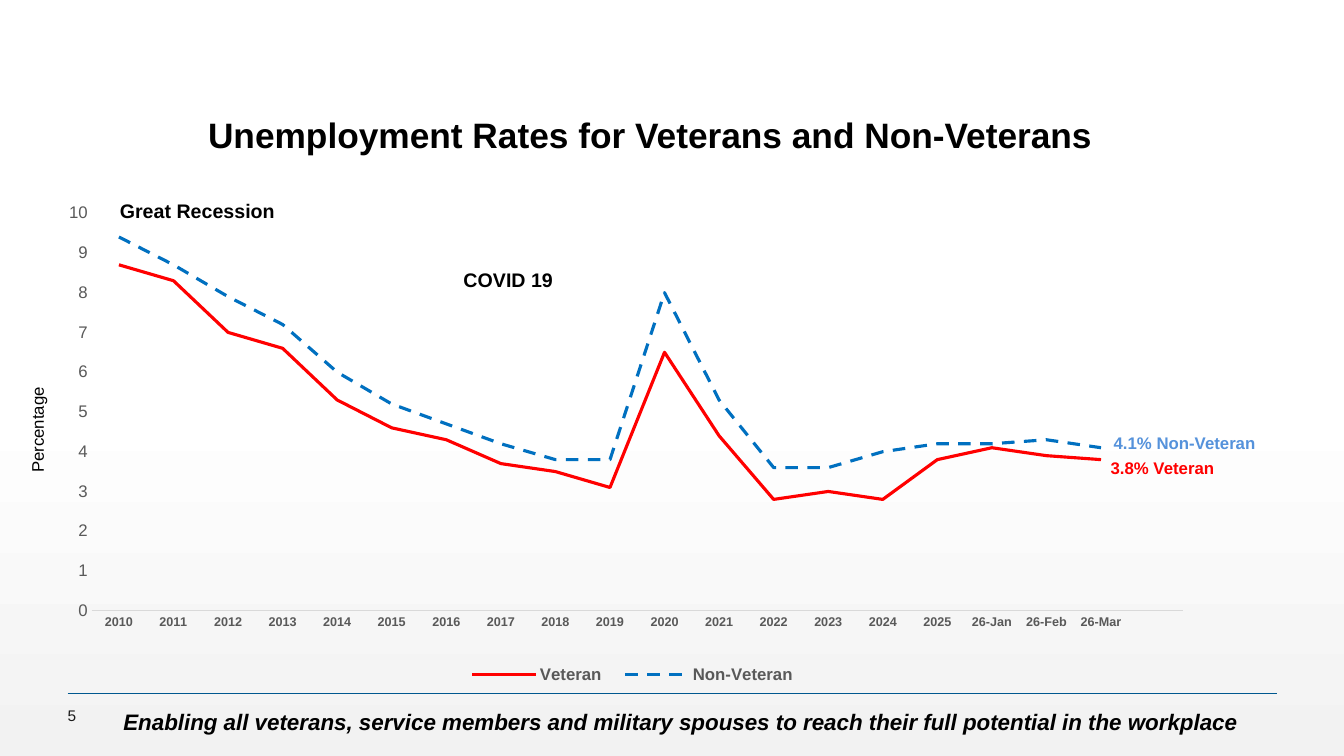
from lxml.etree import SubElement
from pptx import Presentation
from pptx.chart.data import CategoryChartData
from pptx.dml.color import RGBColor
from pptx.enum.chart import XL_CHART_TYPE as ChartType, XL_LEGEND_POSITION as LegendPosition
from pptx.enum.chart import XL_TICK_MARK as TickMark
from pptx.enum.dml import MSO_LINE as Dash
from pptx.enum.shapes import MSO_CONNECTOR as Connector
from pptx.enum.text import MSO_ANCHOR as Anchor, PP_ALIGN as Align
from pptx.oxml.ns import qn
from pptx.util import Inches, Pt

COLUMNS, ROWS = 160, 90
UNIT = Inches(1) / 12
FONT = "Arial"
BLACK, GREY, RED, BLUE = "000000", "595959", "FF0000", "0070C0"
YEARS = [str(year) for year in range(2010, 2026)] + ["26-Jan", "26-Feb", "26-Mar", ""]
RATES = [
    ("Veteran", RED, Dash.SOLID,
     [8.7, 8.3, 7, 6.6, 5.3, 4.6, 4.3, 3.7, 3.5, 3.1, 6.5, 4.4, 2.8, 3, 2.8, 3.8, 4.1, 3.9, 3.8, None]),
    ("Non-Veteran", BLUE, Dash.DASH,
     [9.4, 8.7, 7.9, 7.2, 6, 5.2, 4.7, 4.2, 3.8, 3.8, 8, 5.3, 3.6, 3.6, 4, 4.2, 4.2, 4.3, 4.1, None]),
]
NOTES = [
    ("Great Recession", (6.96, -1.2, 21, 4.08), 14, BLACK, True, 0),
    ("COVID 19", (47.88, 7.08, 13.2, 4.08), 14, BLACK, True, 0),
    ("Percentage", (-8.04, 25.08, 12.72, 3.6), 12, BLACK, False, 270),
    ("3.8% Veteran", (124.92, 29.64, 14.88, 3.6), 12, RED, True, 0),
    ("4.1% Non-Veteran", (125.28, 26.64, 19.44, 3.6), 12, "5592DB", True, 0),
]


def color(value):
    """Turn a hex string into a colour."""
    return RGBColor.from_string(value)


def place(box):
    """Turn grid units into slide lengths."""
    return [round(length * UNIT) for length in box]


def inside(box, part):
    """Move a part given relative to a box onto the slide grid."""
    return (box[0] + part[0], box[1] + part[1], *part[2:])


def style(font, size, value, bold=False, italic=False):
    """Set the look of a font."""
    font.name, font.size = FONT, Pt(size)
    font.bold, font.italic = bold, italic
    font.color.rgb = color(value)


def add_text(page, box, text, size, value=BLACK, bold=False, italic=False, align=Align.LEFT):
    """Add one line of text and return its shape."""
    shape = page.shapes.add_textbox(*place(box))
    frame = shape.text_frame
    frame.text = text
    frame.word_wrap = False
    para = frame.paragraphs[0]
    para.alignment = align
    style(para.runs[0].font, size, value, bold, italic)
    return shape


def set_background(page):
    """Fade the page from white to light grey below the middle."""
    fill = page.background.fill
    fill.gradient()
    fill.gradient_angle = 270
    stops = page.element.find(".//" + qn("a:gsLst"))
    for stop in list(stops):
        stops.remove(stop)
    for share, value in ((0, "FFFFFF"), (53, "FFFFFF"), (100, "F2F2F2")):
        stop = SubElement(stops, qn("a:gs"), pos=str(share * 1000))
        SubElement(stop, qn("a:srgbClr"), val=value)


def set_layout(parent, index, shares, inner=False):
    """Fix a chart part at shares of the chart area."""
    for old in parent.findall(qn("c:layout")):
        parent.remove(old)
    layout = SubElement(parent, qn("c:layout"))
    parent.insert(index, layout)
    manual = SubElement(layout, qn("c:manualLayout"))
    if inner:
        SubElement(manual, qn("c:layoutTarget"), val="inner")
    for name in ("xMode", "yMode"):
        SubElement(manual, qn("c:" + name), val="edge")
    for name, share in zip("xywh", shares):
        SubElement(manual, qn("c:" + name), val=str(share))


def style_axes(chart):
    """Format both axes of the chart."""
    years, rates = chart.category_axis, chart.value_axis
    for axis, size, bold in ((years, 9, True), (rates, 12, False)):
        axis.major_tick_mark = axis.minor_tick_mark = TickMark.NONE
        axis.has_major_gridlines = False
        style(axis.tick_labels.font, size, GREY, bold)
    years.format.line.color.rgb = color("D9D9D9")
    years.format.line.width = Pt(0.75)
    rates.format.line.fill.background()
    rates.minimum_scale, rates.maximum_scale, rates.major_unit = 0, 10, 1
    rates.tick_labels.number_format = "0"
    rates.tick_labels.number_format_is_linked = False


def add_rates(page, box):
    """Add the line chart with its annotations."""
    data = CategoryChartData()
    data.categories = YEARS
    for name, _, _, values in RATES:
        data.add_series(name, values)
    chart = page.shapes.add_chart(ChartType.LINE, *place(box), data).chart
    chart.has_title = False
    style(chart.font, 10, BLACK)
    style_axes(chart)
    plot = chart.plots[0]
    plot.vary_by_categories = False
    for series, (_, value, dash, _) in zip(plot.series, RATES):
        series.smooth = False
        line = series.format.line
        line.color.rgb = color(value)
        line.width, line.dash_style = Pt(2.25), dash
    chart.has_legend = True
    legend = chart.legend
    legend.position = LegendPosition.BOTTOM
    legend.include_in_layout = False
    style(legend.font, 12, GREY, True)
    area = chart.element.find(".//" + qn("c:plotArea"))
    set_layout(area, 0, (0.035, 0.016, 0.948, 0.663), True)
    set_layout(chart.element.find(".//" + qn("c:legend")), 1, (0.35, 0.76, 0.31, 0.05))
    for text, part, size, value, bold, angle in NOTES:
        add_text(page, inside(box, part), text, size, value, bold).rotation = angle


def add_footer(page, box):
    """Add the rule, the page number and the tagline."""
    left, top, width, _ = place(box)
    rule = page.shapes.add_connector(Connector.STRAIGHT, left, top, left + width, top)
    rule.line.color.rgb = color("00588F")
    rule.line.width = Pt(1)
    SubElement(rule.element.spPr, qn("a:effectLst"))
    number = add_text(page, inside(box, (0, 1.2, 12, 2.88)), "5", 11, "1A1A1A").text_frame
    number.margin_left = 0
    number.vertical_anchor = Anchor.MIDDLE
    add_text(page, inside(box, (4.56, 1.2, 136.92, 4.44)),
             "Enabling all veterans, service members and military spouses "
             "to reach their full potential in the workplace",
             16, bold=True, italic=True, align=Align.CENTER)


def add_title(page, box):
    """Add the centred title."""
    title = add_text(page, box, "Unemployment Rates for Veterans and Non-Veterans",
                     25.2, bold=True, align=Align.CENTER).text_frame
    title.vertical_anchor = Anchor.MIDDLE
    title.word_wrap = True


def main():
    """Build and save the deck."""
    deck = Presentation()
    deck.slide_width, deck.slide_height = place((COLUMNS, ROWS))
    page = deck.slides.add_slide(deck.slide_layouts[6])
    set_background(page)
    add_title(page, (20.16, 12.96, 114.48, 6))
    add_rates(page, (6.12, 24.24, 137.04, 71.4))
    add_footer(page, (8.04, 82.56, 144, 7))
    deck.save("out.pptx")


if __name__ == "__main__":
    main()
